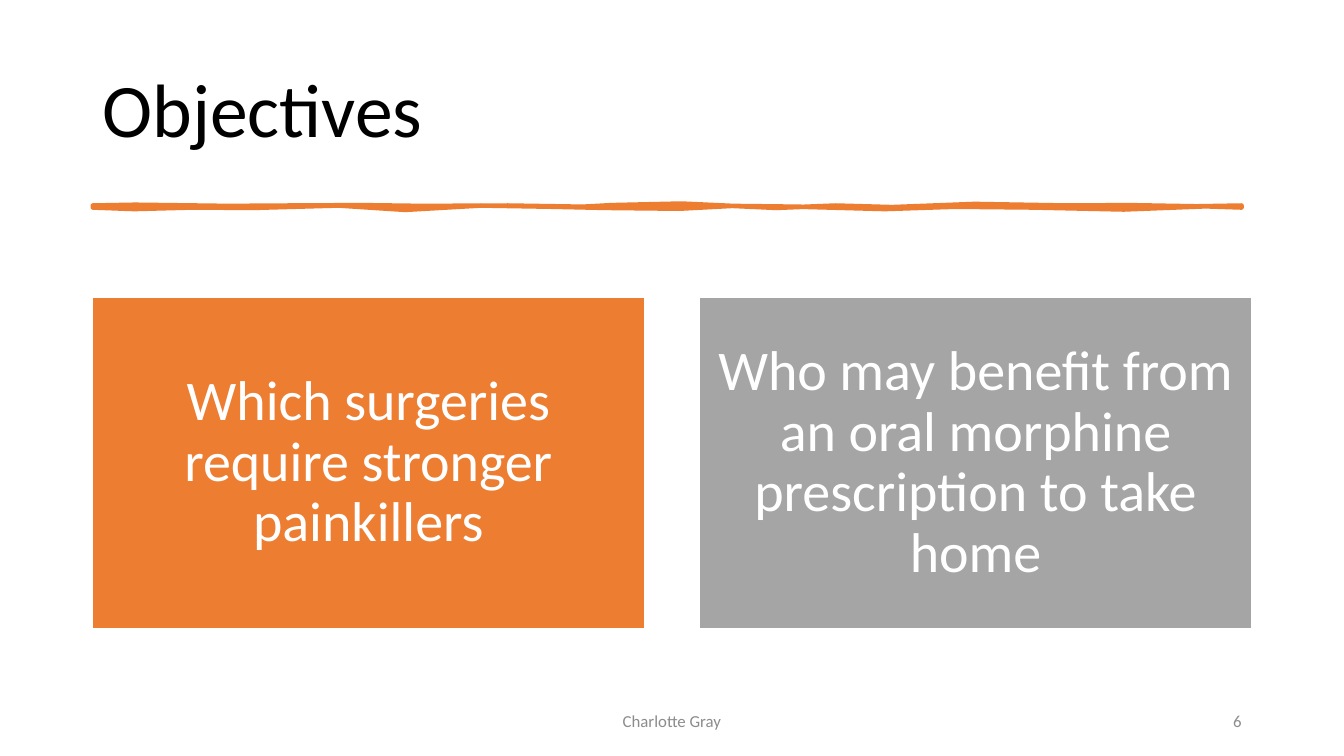
"""Build the Objectives slide: a hand-drawn rule, two objective cards and a footer."""
import lxml.etree
import pptx
import pptx.dml.color
import pptx.enum.shapes
import pptx.enum.text
import pptx.oxml.ns
import pptx.util

Cm = pptx.util.Cm
ALIGN = pptx.enum.text.PP_ALIGN
COLOURS = {"title": "000000", "orange": "ED7D31", "grey": "A5A5A5",
           "white": "FFFFFF", "footer": "8C8C8C"}


def colour(name):
    return pptx.dml.color.RGBColor.from_string(COLOURS[name])


def write(shape, text, size, colour_name, alignment, inset=(0.25, 0.13), spacing=1.0):
    frame = shape.text_frame
    frame.text = text
    paragraph = frame.paragraphs[0]
    formats = [
        (frame, {"word_wrap": True, "auto_size": pptx.enum.text.MSO_AUTO_SIZE.NONE,
                 "vertical_anchor": pptx.enum.text.MSO_ANCHOR.MIDDLE,
                 "margin_left": Cm(inset[0]), "margin_right": Cm(inset[0]),
                 "margin_top": Cm(inset[1]), "margin_bottom": Cm(inset[1])}),
        (paragraph, {"alignment": alignment, "line_spacing": spacing}),
        (paragraph.runs[0].font, {"name": "Calibri", "size": pptx.util.Pt(size)}),
    ]
    for target, values in formats:
        for name, value in values.items():
            setattr(target, name, value)
    paragraph.runs[0].font.color.rgb = colour(colour_name)


presentation = pptx.Presentation()
presentation.slide_width = Cm(33.87)
presentation.slide_height = Cm(19.05)
slide = presentation.slides.add_slide(presentation.slide_layouts[5])

title = slide.shapes.title
for name, value in {"left": 2.33, "top": 1.01, "width": 29.21, "height": 3.68}.items():
    setattr(title, name, Cm(value))
write(title, "Objectives", 54, "title", ALIGN.LEFT, spacing=0.9)

top_edge = [
    (2.34, 5.18), (3.4, 5.16), (5.74, 5.19), (7.26, 5.18), (9.12, 5.17), (10.62, 5.19),
    (12.8, 5.18), (14.68, 5.21), (15.42, 5.17), (17.17, 5.13), (19.56, 5.24),
    (21.06, 5.18), (22.48, 5.22), (24.56, 5.14), (26.9, 5.18), (28.45, 5.17),
    (30.15, 5.2), (31.29, 5.18),
]
bottom_edge = [
    (31.29, 5.23), (30.38, 5.2), (28.32, 5.28), (26.04, 5.23), (24.08, 5.21),
    (22.3, 5.27), (20.14, 5.21), (18.44, 5.19), (17.12, 5.26), (15.27, 5.24),
    (13.89, 5.21), (12.12, 5.18), (10.21, 5.29), (8.53, 5.18), (6.38, 5.24),
    (4.85, 5.23), (3.38, 5.27), (2.34, 5.23),
]
outline = [(Cm(x), Cm(y)) for x, y in top_edge + bottom_edge]
builder = slide.shapes.build_freeform(*outline[0])
builder.add_line_segments(outline[1:], close=True)
rule = builder.convert_to_shape()
rule.shadow.inherit = False
rule.fill.solid()
rule.fill.fore_color.rgb = colour("orange")
rule.line.color.rgb = colour("orange")
rule.line.width = pptx.util.Pt(3.25)
rule_line = rule.element.spPr.find(pptx.oxml.ns.qn("a:ln"))
lxml.etree.SubElement(rule_line, pptx.oxml.ns.qn("a:round"))

cards = [("orange", "Which surgeries require stronger painkillers"),
         ("grey", "Who may benefit from an oral morphine prescription to take home")]
for index, (fill, text) in enumerate(cards):
    card = slide.shapes.add_shape(pptx.enum.shapes.MSO_SHAPE.RECTANGLE,
                                  Cm(2.33 + 15.3 * index), Cm(7.5), Cm(13.91), Cm(8.35))
    card.shadow.inherit = False
    card.fill.solid()
    card.fill.fore_color.rgb = colour(fill)
    card.line.color.rgb = colour("white")
    card.line.width = pptx.util.Pt(1)
    write(card, text, 40, "white", ALIGN.CENTER, inset=(0.42, 0.42), spacing=0.9)

footers = [("Charlotte Gray", 11.22, 11.43, ALIGN.CENTER), ("6", 23.92, 7.62, ALIGN.RIGHT)]
for text, left, width, alignment in footers:
    footer = slide.shapes.add_textbox(Cm(left), Cm(17.66), Cm(width), Cm(1.01))
    write(footer, text, 12, "footer", alignment)

presentation.save("out.pptx")
